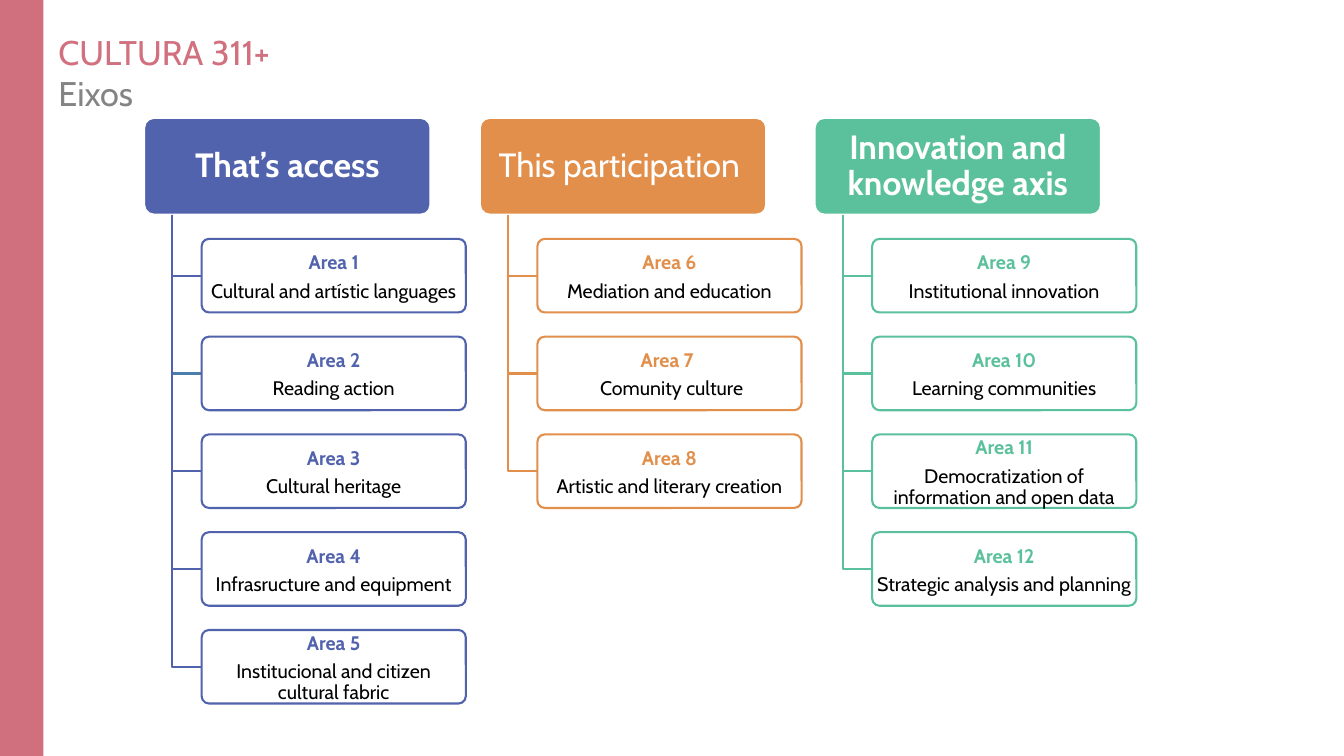
import pptx
import pptx.util
import pptx.dml.color
import pptx.enum.shapes
import pptx.enum.text
import pptx.oxml
import pptx.oxml.ns

Inches = pptx.util.Inches
Pt = pptx.util.Pt
SHAPES = pptx.enum.shapes.MSO_SHAPE
ALIGN = pptx.enum.text.PP_ALIGN

COLORS = {
    "bar": "B4182E", "title": "D1707E", "subtitle": "848484",
    "access": "5263AE", "access_alt": "4B7DAD", "participation": "E18F4B",
    "innovation": "5BC19C", "white": "FFFFFF", "black": "000000",
}
FONT = "Cabin"

# left edge, colour, heading, bold heading, areas
AXES = [
    (1.43, "access", "That’s access", True, [
        ("Area 1", "Cultural and artístic languages"),
        ("Area 2", "Reading action"),
        ("Area 3", "Cultural heritage"),
        ("Area 4", "Infrasructure and equipment"),
        ("Area 5", "Institucional and citizen cultural fabric"),
    ]),
    (4.76, "participation", "This participation ", False, [
        ("Area 6", "Mediation and education"),
        ("Area 7 ", " Comunity culture"),
        ("Area 8", "Artistic and literary creation"),
    ]),
    (8.08, "innovation", "Innovation and knowledge axis", True, [
        ("Area 9", "Institutional innovation"),
        ("Area 10", "Learning communities"),
        ("Area 11", "Democratization of information and open data"),
        ("Area 12", "Strategic analysis and planning"),
    ]),
]
BRANCH_COLORS = {"Area 2": "access_alt"}

HEAD_TOP, HEAD_WIDTH, HEAD_HEIGHT = 1.17, 2.84, 0.96
AREA_TOP, AREA_WIDTH, AREA_HEIGHT, AREA_PITCH = 2.37, 2.62, 0.73, 0.97
TRUNK_INDENT, AREA_INDENT = 0.28, 0.57
HEAD_INSETS = (0.05, 0.03, 0.05, 0.03)
AREA_INSETS = (0.02, 0.08, 0.02, 0.04)
TITLE_INSETS = (0.13, 0.07, 0.13, 0.59)


def rgb(name):
    return pptx.dml.color.RGBColor.from_string(COLORS[name])


def add_box(page, kind, left, top, width, height, fill, line=None, opacity=100):
    box = page.shapes.add_shape(
        kind, Inches(left), Inches(top), Inches(width), Inches(height))
    box.shadow.inherit = False
    box.fill.solid()
    box.fill.fore_color.rgb = rgb(fill)
    if opacity < 100:
        color = box.fill._xPr.find(".//" + pptx.oxml.ns.qn("a:srgbClr"))
        alpha = pptx.oxml.parse_xml(
            "<a:alpha %s val='%d'/>" % (pptx.oxml.ns.nsdecls("a"), opacity * 1000))
        color.append(alpha)
    if line:
        box.line.color.rgb = rgb(line)
        box.line.width = Pt(1.5)
    else:
        box.line.fill.background()
    if kind == SHAPES.ROUNDED_RECTANGLE:
        box.adjustments[0] = 0.1
    return box


def set_frame(box, insets):
    frame = box.text_frame
    frame.word_wrap = True
    frame.vertical_anchor = pptx.enum.text.MSO_ANCHOR.MIDDLE
    frame.margin_left, frame.margin_top, frame.margin_right, frame.margin_bottom = (
        Inches(inset) for inset in insets)


def write(box, text, color, size, bold=False, align=ALIGN.CENTER, spacing=0.9, after=0):
    """Fill the first paragraph of the box, or append one if it is taken."""
    frame = box.text_frame
    para = frame.paragraphs[0] if not frame.text else frame.add_paragraph()
    para.alignment = align
    para.line_spacing = spacing
    para.space_after = Pt(after)
    span = para.add_run()
    span.text = text
    span.font.name = FONT
    span.font.size = Pt(size)
    span.font.bold = bold
    span.font.color.rgb = rgb(color)


def add_branch(page, trunk_x, start_y, end_x, end_y, color):
    """Draw an elbow line down the trunk and across to an area box."""
    builder = page.shapes.build_freeform(Inches(trunk_x), Inches(start_y))
    builder.add_line_segments(
        [(Inches(trunk_x), Inches(end_y)), (Inches(end_x), Inches(end_y))], close=False)
    branch = builder.convert_to_shape()
    branch.shadow.inherit = False
    branch.fill.background()
    branch.line.color.rgb = rgb(color)
    branch.line.width = Pt(1.5)


def add_axis(page, left, color, heading, bold, areas):
    head = add_box(page, SHAPES.ROUNDED_RECTANGLE, left, HEAD_TOP,
                   HEAD_WIDTH, HEAD_HEIGHT, color, line="white")
    set_frame(head, HEAD_INSETS)
    write(head, heading, "white", 24, bold=bold)
    area_left = left + AREA_INDENT
    for row, (label, description) in enumerate(areas):
        top = AREA_TOP + row * AREA_PITCH
        add_branch(page, left + TRUNK_INDENT, HEAD_TOP + HEAD_HEIGHT,
                   area_left, top + AREA_HEIGHT / 2, BRANCH_COLORS.get(label, color))
        area = add_box(page, SHAPES.ROUNDED_RECTANGLE, area_left, top,
                       AREA_WIDTH, AREA_HEIGHT, "white", line=color, opacity=90)
        set_frame(area, AREA_INSETS)
        write(area, label, color, 14, bold=True, after=5)
        write(area, description, "black", 14)


def main():
    deck = pptx.Presentation()
    deck.slide_width, deck.slide_height = Inches(13.33), Inches(7.5)
    page = deck.slides.add_slide(deck.slide_layouts[6])
    add_box(page, SHAPES.RECTANGLE, 0, 0, 0.43, 7.5, "bar", opacity=62)
    for axis in AXES:
        add_axis(page, *axis)
    title = page.shapes.add_textbox(Inches(0.45), 0, Inches(2.76), Inches(1.95))
    set_frame(title, TITLE_INSETS)
    for text, color in (("CULTURA 311+", "title"), ("Eixos", "subtitle")):
        write(title, text, color, 24.4, align=ALIGN.LEFT, spacing=1.0)
    deck.save("out.pptx")


if __name__ == "__main__":
    main()
